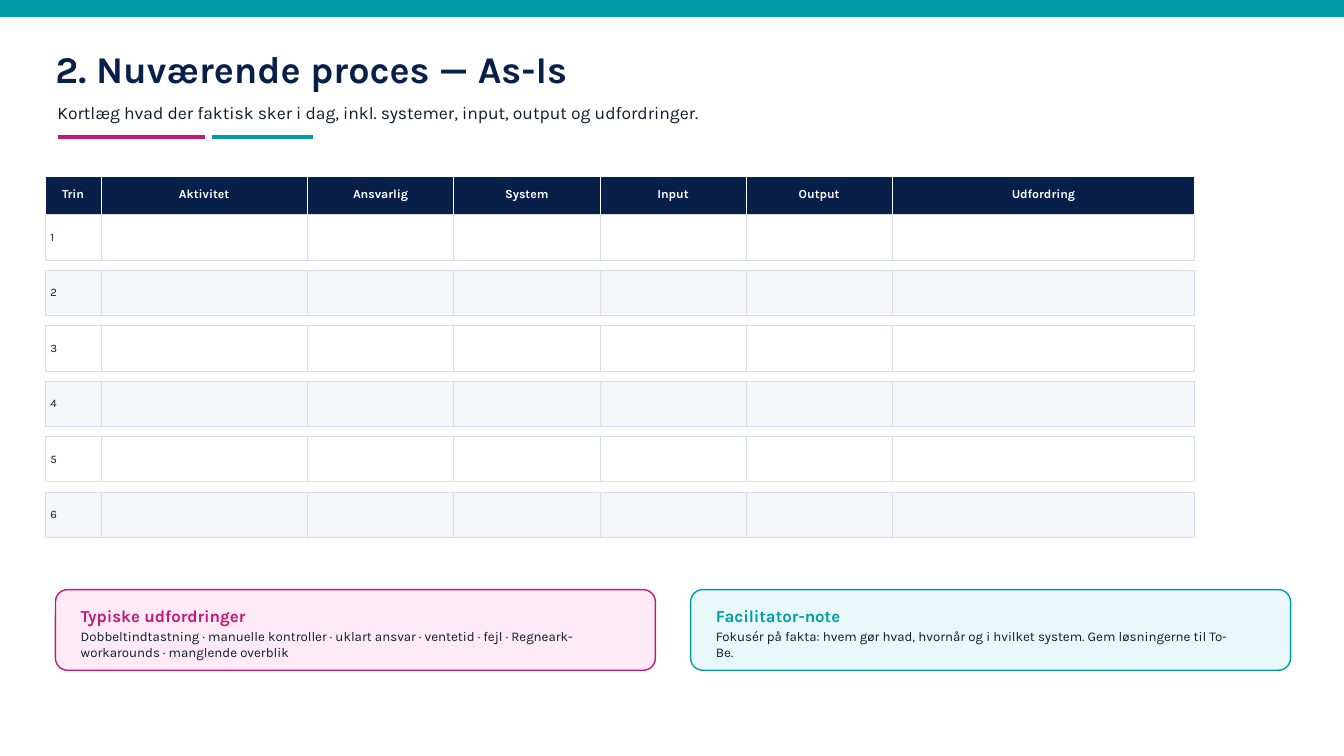
from pptx import Presentation
from pptx.dml.color import RGBColor
from pptx.enum.shapes import MSO_CONNECTOR, MSO_SHAPE
from pptx.enum.text import MSO_ANCHOR, PP_ALIGN
from pptx.oxml.ns import qn
from pptx.util import Inches, Pt
from lxml import etree

RECT, ROUNDED = MSO_SHAPE.RECTANGLE, MSO_SHAPE.ROUNDED_RECTANGLE
STRAIGHT = MSO_CONNECTOR.STRAIGHT
MIDDLE = MSO_ANCHOR.MIDDLE
LEFT, CENTER = PP_ALIGN.LEFT, PP_ALIGN.CENTER

FONT = "Karla"
COLORS = {
    "white": "FFFFFF", "navy": "071F49", "ink": "0D1B2A",
    "teal": "009CA6", "magenta": "C2187B", "grid": "D8DEE8",
    "stripe": "F5F7FA", "pink_tint": "FDEAF5", "teal_tint": "E8F7F8",
}

# Process grid: column headings with widths, then row measures
COLUMNS = [("Trin", 0.55), ("Aktivitet", 2.05), ("Ansvarlig", 1.45),
           ("System", 1.45), ("Input", 1.45), ("Output", 1.45),
           ("Udfordring", 3)]
GRID_LEFT, GRID_TOP = 0.45, 1.75
HEADER_HEIGHT, ROW_HEIGHT, ROW_PITCH = 0.38, 0.45, 0.55
STEP_COUNT = 6

NOTES = [
    (0.55, "magenta", "pink_tint", "Typiske udfordringer", 5.35,
     "Dobbeltindtastning · manuelle kontroller · uklart ansvar · ventetid"
     " · fejl · Regneark-workarounds · manglende overblik"),
    (6.85, "teal", "teal_tint", "Facilitator-note", 5.2,
     "Fokusér på fakta: hvem gør hvad, hvornår og i hvilket system."
     " Gem løsningerne til To-Be."),
]


def rgb(name):
    return RGBColor.from_string(COLORS[name])


def write(holder, text, size, color="ink", bold=False, align=LEFT,
          side=0, bottom=0):
    frame = holder.text_frame
    frame.word_wrap = True
    frame.vertical_anchor = MIDDLE
    frame.margin_left = frame.margin_right = Inches(side)
    frame.margin_top, frame.margin_bottom = 0, Inches(bottom)
    paragraph = frame.paragraphs[0]
    paragraph.alignment = align
    run = paragraph.add_run()
    run.text = text
    run.font.name, run.font.size, run.font.bold = FONT, Pt(size), bold
    run.font.color.rgb = rgb(color)


def add_label(slide, left, top, width, height, text, size, **style):
    label = slide.shapes.add_textbox(
        Inches(left), Inches(top), Inches(width), Inches(height))
    write(label, text, size, **style)


def add_panel(slide, left, top, width, height, fill, line, weight, kind=RECT):
    panel = slide.shapes.add_shape(
        kind, Inches(left), Inches(top), Inches(width), Inches(height))
    panel.shadow.inherit = False
    panel.fill.solid()
    panel.fill.fore_color.rgb = rgb(fill)
    panel.line.color.rgb = rgb(line)
    panel.line.width = Pt(weight)
    return panel


def add_rule(slide, start, end, y, color):
    rule = slide.shapes.add_connector(
        STRAIGHT, Inches(start), Inches(y), Inches(end), Inches(y))
    rule.line.color.rgb = rgb(color)
    rule.line.width = Pt(3)
    etree.SubElement(rule._element.spPr, qn("a:effectLst"))


def add_process_grid(slide):
    left = GRID_LEFT
    for heading, width in COLUMNS:
        header = add_panel(slide, left, GRID_TOP, width, HEADER_HEIGHT,
                           "navy", "white", 0.4)
        write(header, heading, 8.8, color="white", bold=True, align=CENTER,
              side=0.04, bottom=0.03)
        for step in range(STEP_COUNT):
            top = GRID_TOP + HEADER_HEIGHT + step * ROW_PITCH
            fill = "stripe" if step % 2 else "white"
            cell = add_panel(slide, left, top, width, ROW_HEIGHT,
                             fill, "grid", 0.4)
            if heading == "Trin":
                write(cell, str(step + 1), 8.2, side=0.05, bottom=0.01)
        left += width


def add_note(slide, left, accent, tint, heading, body_width, body):
    card = add_panel(slide, left, 5.85, 5.95, 0.8, tint, accent, 1, ROUNDED)
    card.adjustments[0] = 0.15
    add_label(slide, left + 0.25, 6.02, 2.2, 0.18, heading, 12,
              color=accent, bold=True)
    add_label(slide, left + 0.25, 6.3, body_width, 0.18, body, 9.5)


def main():
    deck = Presentation()
    deck.slide_width, deck.slide_height = Inches(13.33), Inches(7.5)
    slide = deck.slides.add_slide(deck.slide_layouts[6])

    # Top band, title and accent rules
    add_panel(slide, 0, 0, 13.33, 0.16, "teal", "teal", 1)
    add_label(slide, 0.55, 0.45, 8.8, 0.45, "2. Nuværende proces — As-Is", 27,
              color="navy", bold=True)
    add_label(slide, 0.57, 0.95, 9.8, 0.33,
              "Kortlæg hvad der faktisk sker i dag, inkl. systemer, input, "
              "output og udfordringer.", 12.5)
    add_rule(slide, 0.58, 2.03, 1.36, "magenta")
    add_rule(slide, 2.1, 3.1, 1.36, "teal")

    # Process steps
    add_process_grid(slide)

    # Notes below the grid
    for note in NOTES:
        add_note(slide, *note)

    deck.save("out.pptx")


if __name__ == "__main__":
    main()
